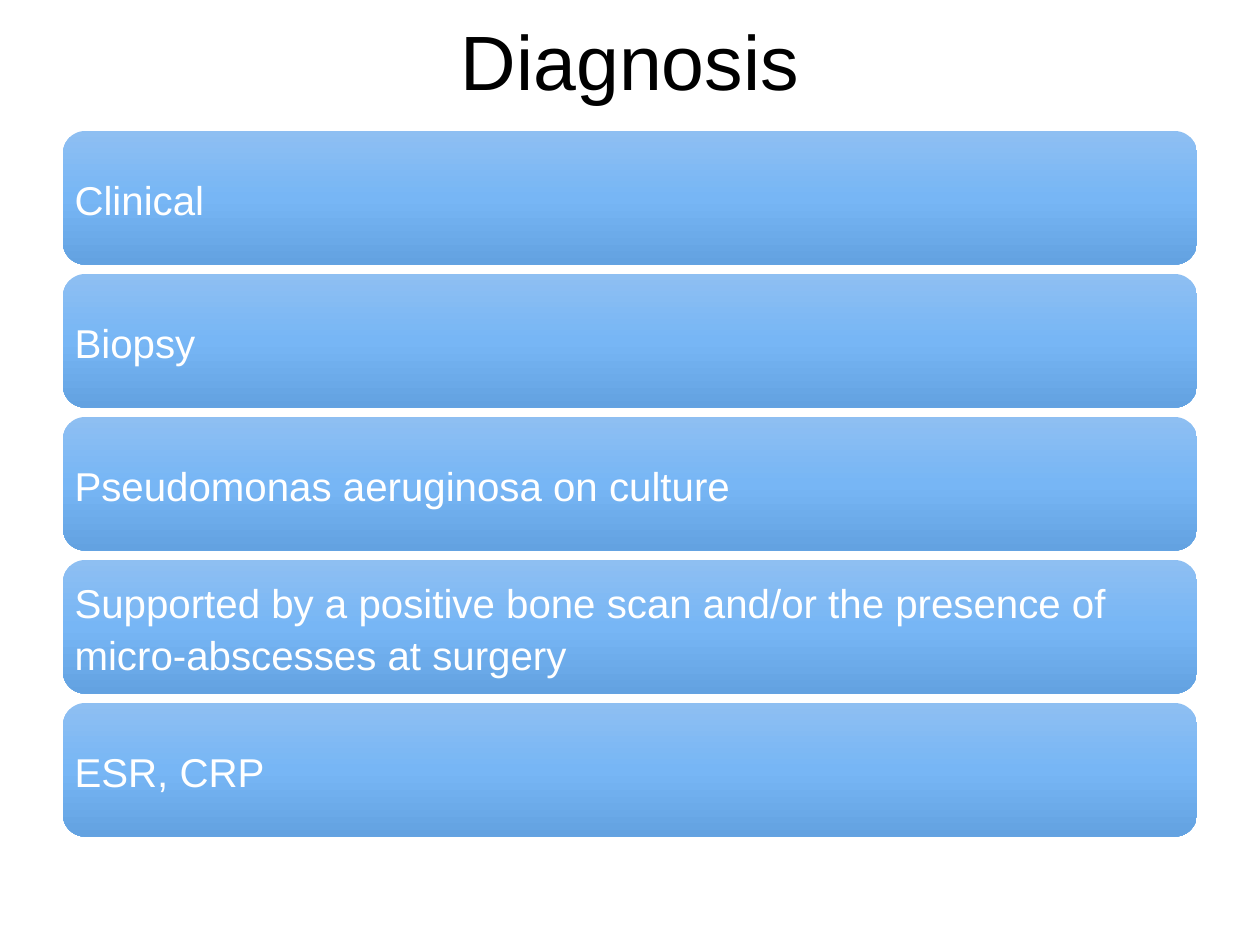
"""Build the Diagnosis slide: a title above five stacked gradient bars."""
from copy import deepcopy

from pptx import Presentation
from pptx import util as u
from pptx.dml.color import RGBColor
from pptx.enum import shapes, text

BLACK = RGBColor(0x00, 0x00, 0x00)
WHITE = RGBColor(0xFF, 0xFF, 0xFF)
BAR_TOP = RGBColor(0x8E, 0xBF, 0xF2)
BAR_MIDDLE = RGBColor(0x77, 0xB6, 0xF5)
BAR_BOTTOM = RGBColor(0x63, 0xA2, 0xE1)
GRADIENT = [(0, BAR_TOP), (0.5, BAR_MIDDLE), (1, BAR_BOTTOM)]
FINDINGS = [
    "Clinical",
    "Biopsy",
    "Pseudomonas aeruginosa on culture",
    "Supported by a positive bone scan and/or the presence of micro-abscesses at surgery",
    "ESR, CRP",
]


def add_span(para, words, size, color):
    span = para.add_run()
    span.text = words
    span.font.name = "Arial"
    span.font.size = u.Pt(size)
    span.font.color.rgb = color


def fill_gradient(shape):
    shape.fill.gradient()
    shape.fill.gradient_angle = 270
    stop_list = shape._element.spPr.find(".//{*}gsLst")
    stop_list.append(deepcopy(stop_list[0]))
    for stop, (position, color) in zip(shape.fill.gradient_stops, GRADIENT):
        stop.position = position
        stop.color.rgb = color


deck = Presentation()
deck.slide_width = u.Inches(10)
deck.slide_height = u.Inches(7.5)
page = deck.slides.add_slide(deck.slide_layouts[6])

left = deck.slide_width // 20
width = deck.slide_width - 2 * left
first_row = u.Inches(1.04)
bar_height = u.Inches(1.06)
row_pitch = (u.Inches(5.58) - first_row) // (len(FINDINGS) - 1)

title = page.shapes.add_textbox(left, 0, width, u.Inches(1.07))
title.text_frame.word_wrap = True
title.text_frame.margin_top = u.Inches(0.11)
title_para = title.text_frame.paragraphs[0]
title_para.alignment = text.PP_ALIGN.CENTER
add_span(title_para, "Diagnosis", 44, BLACK)

for row, finding in enumerate(FINDINGS):
    bar = page.shapes.add_shape(
        shapes.MSO_SHAPE.ROUNDED_RECTANGLE,
        left, first_row + row * row_pitch, width, bar_height,
    )
    bar.shadow.inherit = False
    bar.line.fill.background()
    fill_gradient(bar)
    frame = bar.text_frame
    frame.word_wrap = True
    frame.vertical_anchor = text.MSO_ANCHOR.MIDDLE
    frame.margin_left = frame.margin_right = u.Inches(0.04)
    para = frame.paragraphs[0]
    para.alignment = text.PP_ALIGN.LEFT
    para.line_spacing = 1.07
    add_span(para, finding, 23, WHITE)

deck.save("out.pptx")
